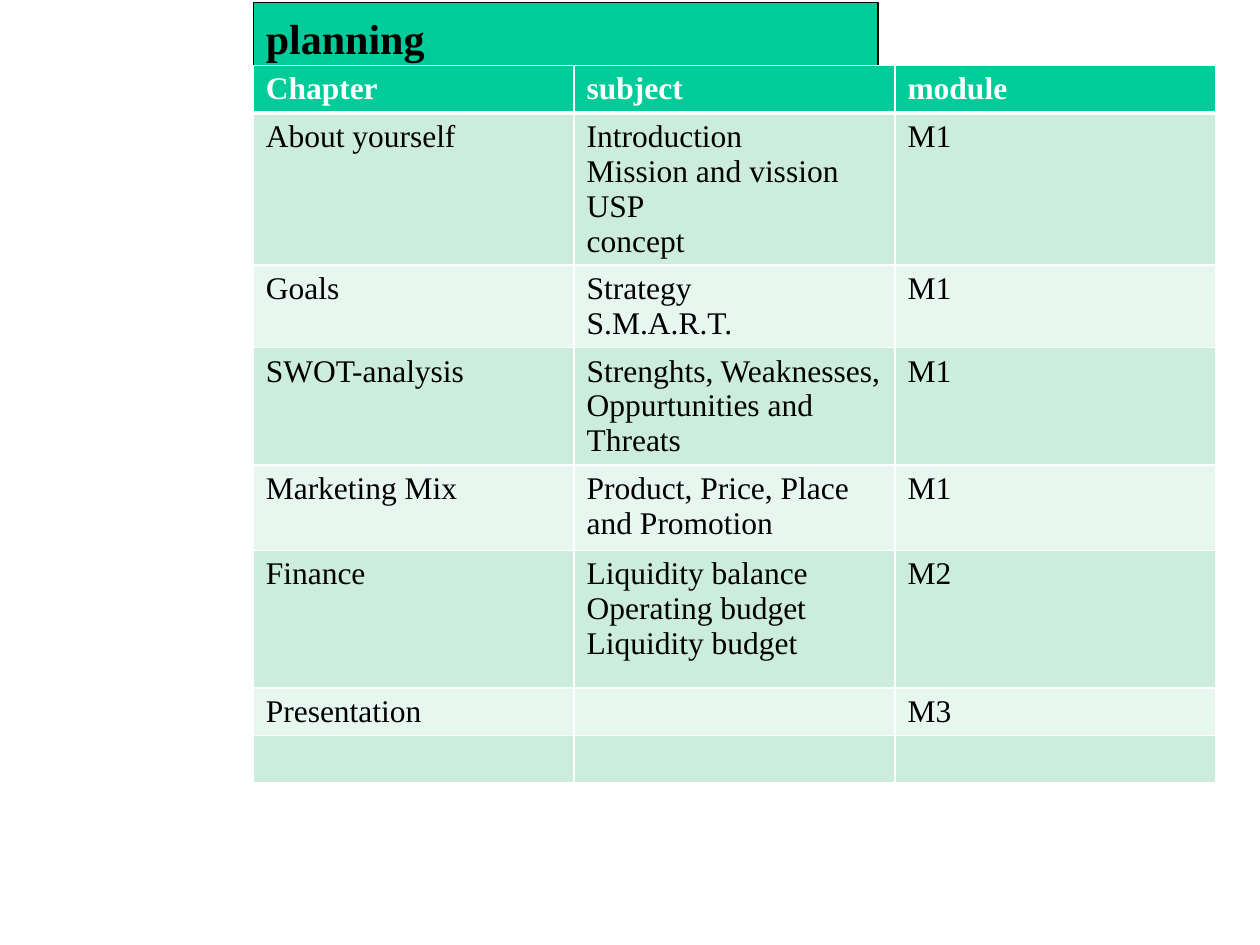
from dataclasses import dataclass

from lxml.etree import SubElement
from pptx import Presentation
from pptx.dml.color import RGBColor
from pptx.enum.text import MSO_ANCHOR, MSO_AUTO_SIZE, PP_ALIGN
from pptx.oxml.ns import qn
from pptx.util import Inches, Pt


@dataclass(frozen=True)
class Theme:
    font: str = "Times New Roman"
    title_size: int = 24
    body_size: int = 18
    accent: str = "00CC99"
    bands: tuple = ("CCECDE", "E7F6EF")
    dark: str = "000000"
    light: str = "FFFFFF"


class SlideBuilder:
    def __init__(self, presentation, theme):
        self.theme = theme
        self.slide = presentation.slides.add_slide(presentation.slide_layouts[5])

    def apply(self, target, values):
        for name, value in values.items():
            setattr(target, name, value)

    def format_font(self, font, size, color, bold):
        values = {"name": self.theme.font, "size": Pt(size), "bold": bold}
        self.apply(font, values)
        font.color.rgb = RGBColor.from_string(color)

    def fill(self, target, color):
        target.fill.solid()
        target.fill.fore_color.rgb = RGBColor.from_string(color)

    def add_title(self, text, left, top, width, height):
        title = self.slide.shapes.title
        self.apply(title, {
            "left": Inches(left), "top": Inches(top),
            "width": Inches(width), "height": Inches(height),
        })
        self.fill(title, self.theme.accent)
        title.line.color.rgb = RGBColor.from_string(self.theme.dark)
        title.line.width = Pt(0.75)
        frame = title.text_frame
        self.apply(frame, {
            "text": text, "word_wrap": True, "auto_size": MSO_AUTO_SIZE.NONE,
            "vertical_anchor": MSO_ANCHOR.TOP, "margin_top": Inches(0.08),
        })
        paragraph = frame.paragraphs[0]
        paragraph.alignment = PP_ALIGN.LEFT
        self.format_font(paragraph.runs[0].font, self.theme.title_size, self.theme.dark, True)

    def add_borders(self, cell, widths):
        properties = cell._tc.get_or_add_tcPr()
        for index, (side, width) in enumerate(widths.items()):
            line = properties.makeelement(qn(f"a:{side}"), {"w": str(Pt(width))})
            solid = SubElement(line, qn("a:solidFill"))
            SubElement(solid, qn("a:srgbClr"), val=self.theme.light)
            properties.insert(index, line)

    def format_cell(self, cell, text, fill, color, bold, borders):
        cell.text = text
        self.fill(cell, fill)
        self.add_borders(cell, borders)
        for paragraph in cell.text_frame.paragraphs:
            for run in paragraph.runs:
                self.format_font(run.font, self.theme.body_size, color, bold)
            if not paragraph.runs:
                size = str(self.theme.body_size * 100)
                ending = SubElement(paragraph._p, qn("a:endParaRPr"), sz=size)
                SubElement(ending, qn("a:latin"), typeface=self.theme.font)

    def add_table(self, rows, heights, left, top, width):
        columns = len(rows[0])
        table = self.slide.shapes.add_table(
            len(rows), columns, Inches(left), Inches(top),
            Inches(width), Inches(sum(heights)),
        ).table
        table.horz_banding = False
        for row_index, (texts, height) in enumerate(zip(rows, heights)):
            table.rows[row_index].height = Inches(height)
            header = row_index == 0
            fill = self.theme.accent if header else self.theme.bands[(row_index - 1) % 2]
            color = self.theme.light if header else self.theme.dark
            borders = {
                "lnL": 1, "lnR": 1,
                "lnT": 3 if row_index == 1 else 1,
                "lnB": 3 if header else 1,
            }
            for column_index, text in enumerate(texts):
                cell = table.cell(row_index, column_index)
                self.format_cell(cell, text, fill, color, header, borders)


def main():
    presentation = Presentation()
    presentation.slide_width = Inches(10)
    presentation.slide_height = Inches(7.5)
    builder = SlideBuilder(presentation, Theme())
    builder.add_title("planning", 2.01, 0.02, 4.96, 0.63)
    chapters = [
        ("Chapter", "subject", "module"),
        ("About yourself", "Introduction\nMission and vission\nUSP\nconcept", "M1"),
        ("Goals", "Strategy\nS.M.A.R.T.", "M1"),
        ("SWOT-analysis", "Strenghts, Weaknesses, Oppurtunities and Threats", "M1"),
        ("Marketing Mix", "Product, Price, Place and Promotion", "M1"),
        ("Finance", "Liquidity balance\nOperating budget\nLiquidity budget", "M2"),
        ("Presentation", "", "M3"),
        ("", "", ""),
    ]
    heights = [0.27, 1.09, 0.48, 0.89, 0.68, 1.09, 0.27, 0.27]
    builder.add_table(chapters, heights, 2.01, 0.52, 7.64)
    presentation.save("out.pptx")


if __name__ == "__main__":
    main()
